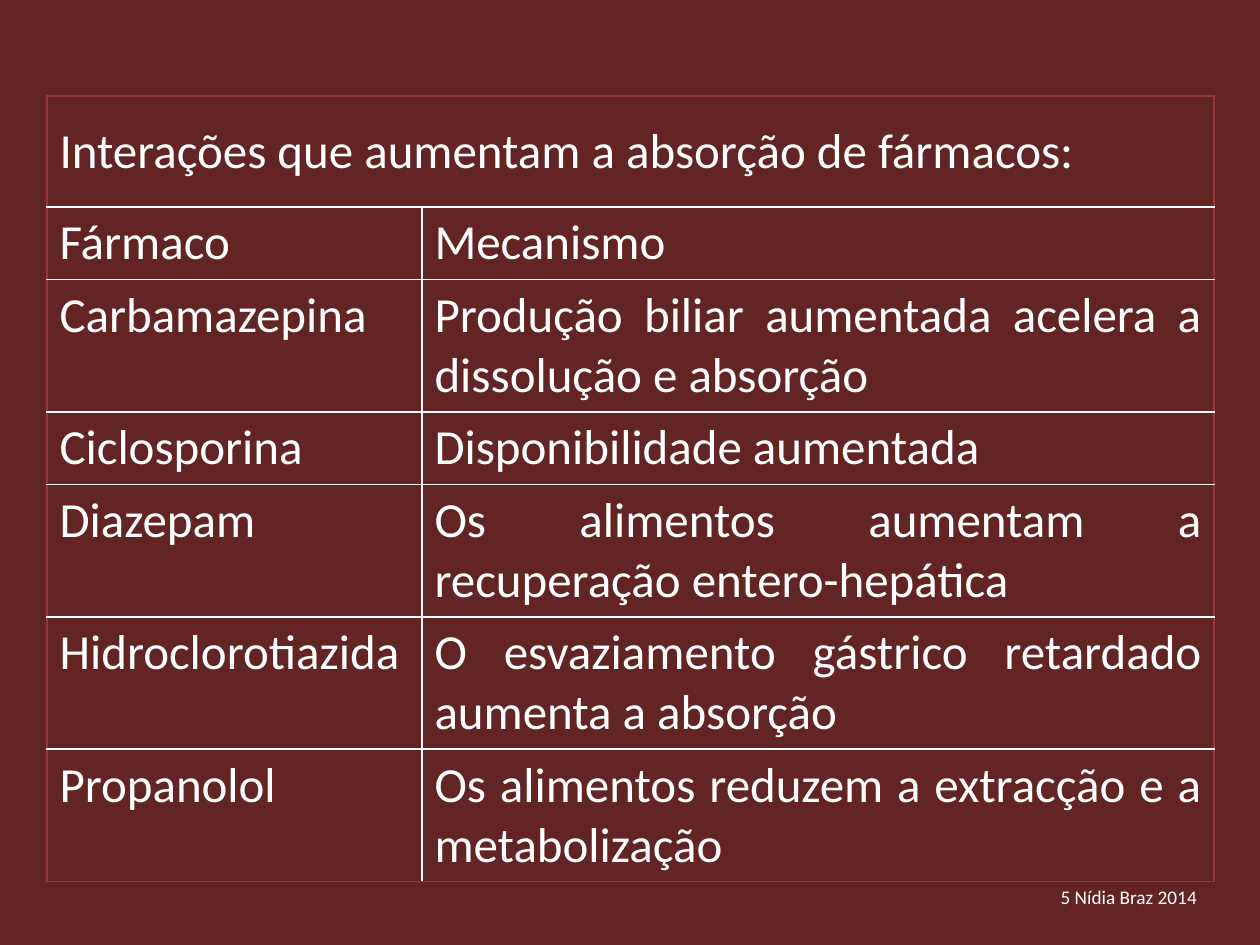
import pptx
import pptx.dml.color
import pptx.enum.text
import pptx.oxml.ns
import pptx.util
from dataclasses import dataclass
from lxml import etree

PX = 914400 / 126


@dataclass(frozen=True)
class Theme:
    background: str = "632523"
    text: str = "FFFFFF"
    inner_line: str = "FFFFFF"
    outer_line: str = "953734"
    font: str = "Calibri"
    table_size: int = 28
    footer_size: int = 11
    line_width: int = 1


theme = Theme()
ALIGN = pptx.enum.text.PP_ALIGN


def px(length):
    return pptx.util.Emu(round(length * PX))


def write(paragraph, text, size, alignment):
    paragraph.alignment = alignment
    run = paragraph.add_run()
    run.text = text
    run.font.name = theme.font
    run.font.size = pptx.util.Pt(size)
    run.font.color.rgb = pptx.dml.color.RGBColor.from_string(theme.text)


presentation = pptx.Presentation()
presentation.slide_width = px(1260)
presentation.slide_height = px(945)
slide = presentation.slides.add_slide(presentation.slide_layouts[6])
slide.background.fill.solid()
slide.background.fill.fore_color.rgb = pptx.dml.color.RGBColor.from_string(theme.background)

# Interactions table
rows = [
    ("Interações que aumentam a absorção de fármacos:", ""),
    ("Fármaco", "Mecanismo"),
    ("Carbamazepina", "Produção biliar aumentada acelera a dissolução e absorção "),
    ("Ciclosporina", "Disponibilidade aumentada"),
    ("Diazepam", "Os alimentos aumentam a recuperação entero-hepática"),
    ("Hidroclorotiazida", "O esvaziamento gástrico retardado aumenta a absorção"),
    ("Propanolol", "Os alimentos reduzem a extracção e a metabolização"),
]
column_widths = [375, 792]
row_heights = [111, 72, 132, 72, 132, 132, 132]

frame = slide.shapes.add_table(
    len(rows), len(column_widths), px(47), px(96), px(sum(column_widths)), px(sum(row_heights))
)
table = frame.table
table.first_row = False
table.horz_banding = False
for column, width in zip(table.columns, column_widths):
    column.width = px(width)
for row, height in zip(table.rows, row_heights):
    row.height = px(height)
title_cell = table.cell(0, 0)
title_cell.merge(table.cell(0, 1))

for row_index, row_texts in enumerate(rows):
    for column_index, text in enumerate(row_texts):
        cell = table.cell(row_index, column_index)
        outer_sides = {
            "lnL": column_index == 0,
            "lnR": column_index == 1 or row_index == 0,
            "lnT": row_index == 0,
            "lnB": row_index == len(rows) - 1,
        }
        properties = cell._tc.get_or_add_tcPr()
        for side, is_outer in outer_sides.items():
            line = etree.SubElement(properties, pptx.oxml.ns.qn(f"a:{side}"))
            line.set("w", str(pptx.util.Pt(theme.line_width)))
            fill = etree.SubElement(line, pptx.oxml.ns.qn("a:solidFill"))
            color = etree.SubElement(fill, pptx.oxml.ns.qn("a:srgbClr"))
            color.set("val", theme.outer_line if is_outer else theme.inner_line)
        cell.fill.background()
        if text:
            is_mechanism = column_index == 1 and row_index > 1
            alignment = ALIGN.JUSTIFY if is_mechanism else ALIGN.LEFT
            write(cell.text_frame.paragraphs[0], text, theme.table_size, alignment)

title_cell.vertical_anchor = pptx.enum.text.MSO_ANCHOR.MIDDLE
title_cell.text_frame.paragraphs[0].space_after = pptx.util.Pt(12)

# Footer
footer = slide.shapes.add_textbox(px(1027), px(879), px(208), px(36))
footer.text_frame.word_wrap = True
footer.text_frame.auto_size = pptx.enum.text.MSO_AUTO_SIZE.SHAPE_TO_FIT_TEXT
write(footer.text_frame.paragraphs[0], "5 Nídia Braz 2014 ", theme.footer_size, ALIGN.CENTER)

presentation.save("out.pptx")
